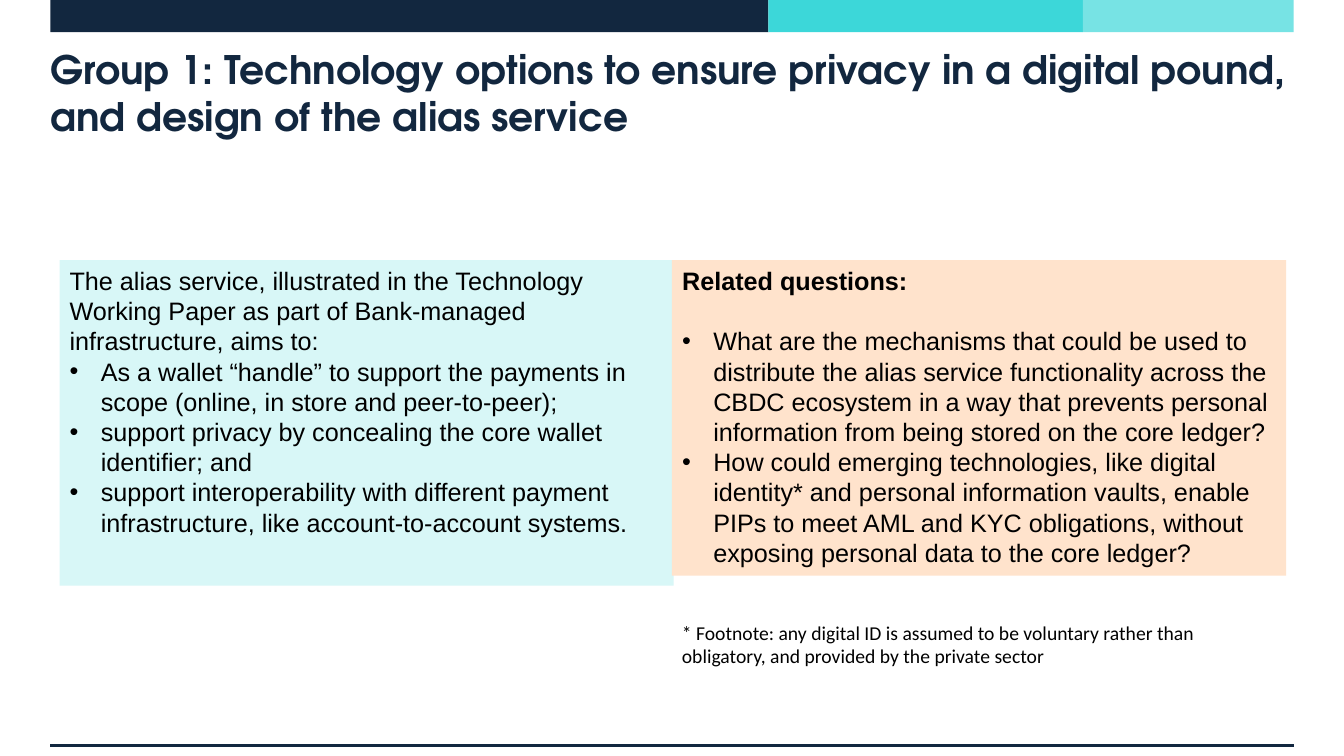
import pptx
import pptx.util
import pptx.dml.color
import pptx.enum.shapes
import pptx.enum.text
import pptx.oxml.ns
import lxml.etree

Inches = pptx.util.Inches
Pt = pptx.util.Pt
RGBColor = pptx.dml.color.RGBColor
TEXT = pptx.enum.text

NAVY = RGBColor(0x12, 0x27, 0x3F)
TEAL = RGBColor(0x3C, 0xD7, 0xD9)
AQUA = RGBColor(0x77, 0xE3, 0xE4)
MINT = RGBColor(0xD8, 0xF7, 0xF7)
PEACH = RGBColor(0xFF, 0xE3, 0xCC)
BLACK = RGBColor(0, 0, 0)

WIDE, HIGH = 13.33, 7.5
EDGE = 0.5
SPAN = WIDE - 2 * EDGE
MID = WIDE / 2
LINE = Pt(21.6)


def place(shape, left, top, width, height):
    box = dict(left=left, top=top, width=width, height=height)
    for name, value in box.items():
        setattr(shape, name, Inches(value))


def style(para, text, form, size, face, color, bold=False):
    for name, value in form.items():
        setattr(para, name, value)
    run = para.add_run()
    run.text = text
    font = dict(size=Pt(size), name=face, bold=bold)
    for name, value in font.items():
        setattr(run.font, name, value)
    run.font.color.rgb = color


deck = pptx.Presentation()
deck.slide_width = Inches(WIDE)
deck.slide_height = Inches(HIGH)
slide = deck.slides.add_slide(deck.slide_layouts[3])

left = EDGE
for width, color in [(7.12, NAVY), (3.12, TEAL), (2.09, AQUA)]:
    band = slide.shapes.add_shape(
        pptx.enum.shapes.MSO_SHAPE.RECTANGLE,
        Inches(left), 0, Inches(width), Inches(0.32))
    band.shadow.inherit = False
    band.fill.solid()
    band.fill.fore_color.rgb = color
    band.line.fill.background()
    left += width

rule = slide.shapes.add_connector(
    pptx.enum.shapes.MSO_CONNECTOR.STRAIGHT,
    Inches(EDGE), Inches(7.4), Inches(EDGE + SPAN), Inches(7.4))
rule.line.color.rgb = NAVY
rule.line.width = Pt(2.25)
lxml.etree.SubElement(rule._element.spPr, pptx.oxml.ns.qn("a:effectLst"))

title = slide.shapes.title
place(title, EDGE, 0.56, SPAN, 0.72)
frame = dict(margin_left=0, margin_right=0, margin_top=0, margin_bottom=0,
             word_wrap=True, auto_size=TEXT.MSO_AUTO_SIZE.NONE,
             vertical_anchor=TEXT.MSO_ANCHOR.MIDDLE)
for name, value in frame.items():
    setattr(title.text_frame, name, value)
style(title.text_frame.paragraphs[0],
      "Group 1: Technology options to ensure privacy in a digital pound, "
      "and design of the alias service",
      dict(alignment=TEXT.PP_ALIGN.LEFT), 28, "TeX Gyre Adventor", NAVY, True)

panels = [
    (1, 0.59, 3.23, MINT, False, Pt(0),
     "The alias service, illustrated in the Technology Working Paper as part "
     "of Bank-managed infrastructure, aims to:",
     ["As a wallet “handle” to support the payments in scope (online, in "
      "store and peer-to-peer);",
      "support privacy by concealing the core wallet identifier; and",
      "support interoperability with different payment infrastructure, like "
      "account-to-account systems."]),
    (2, MID, 3.13, PEACH, True, LINE,
     "Related questions:",
     ["What are the mechanisms that could be used to distribute the alias "
      "service functionality across the CBDC ecosystem in a way that prevents "
      "personal information from being stored on the core ledger?",
      "How could emerging technologies, like digital identity* and personal "
      "information vaults, enable PIPs to meet AML and KYC obligations, "
      "without exposing personal data to the core ledger?"]),
]
for slot, left, height, color, bold, gap, lead, points in panels:
    panel = slide.placeholders[slot]
    place(panel, left, 2.58, 6.09, height)
    panel.fill.solid()
    panel.fill.fore_color.rgb = color
    body = panel.text_frame
    body.auto_size = TEXT.MSO_AUTO_SIZE.NONE
    body.vertical_anchor = TEXT.MSO_ANCHOR.TOP
    for row, text in enumerate([lead] + points):
        para = body.add_paragraph() if row else body.paragraphs[0]
        form = dict(line_spacing=LINE, space_before=Pt(0),
                    space_after=Pt(0) if row else gap)
        style(para, text, form, 18, "Arial", BLACK, bold and not row)
        props = para._p.get_or_add_pPr()
        dent = Inches(0.31) if row else 0
        props.set("marL", str(dent))
        props.set("indent", str(-dent))
        kind = "a:buChar" if row else "a:buNone"
        mark = lxml.etree.SubElement(props, pptx.oxml.ns.qn(kind))
        if row:
            mark.set("char", "•")

note = slide.shapes.add_textbox(
    Inches(MID), Inches(6.11), Inches(5.36), Inches(0.57))
note.text_frame.word_wrap = True
style(note.text_frame.paragraphs[0],
      "* Footnote: any digital ID is assumed to be voluntary rather than "
      "obligatory, and provided by the private sector",
      {}, 14, "Calibri", BLACK)

deck.save("out.pptx")
